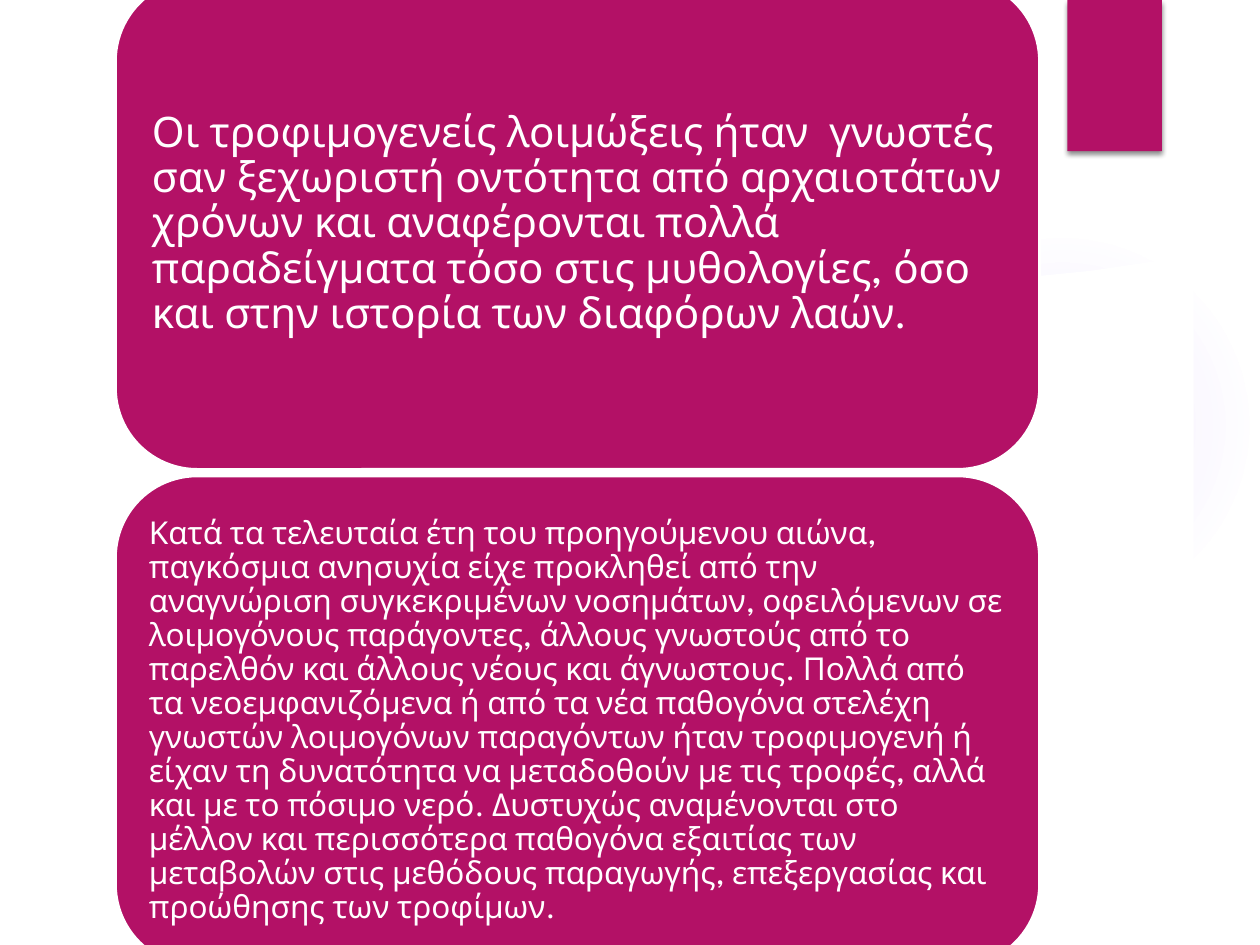
from dataclasses import dataclass

from lxml import etree
from pptx import Presentation
from pptx.dml.color import RGBColor
from pptx.enum import shapes, text
from pptx.oxml import ns
from pptx.util import Pt


@dataclass(frozen=True)
class Theme:
    accent: RGBColor = RGBColor(0xB3, 0x11, 0x66)
    paper: RGBColor = RGBColor(0xFF, 0xFF, 0xFF)
    glow: RGBColor = RGBColor(0x9B, 0x6B, 0xF2)
    font: str = "League Spartan"
    large: int = 24
    small: int = 18


@dataclass(frozen=True)
class Card:
    wording: str
    size: int


THEME = Theme()
CARD_LEFT, CARD_TOP, CARD_WIDTH, CARD_HEIGHT = 66, -11.8, 528, 280
CARD_PITCH = 283.8
# Position and opacity of the glow, in percent
GLOW_STOPS = [(0, 7), (36, 6), (69, 0)]
# Curved upper edge of the sheet, from right to left
SHEET_EDGE = [(682, 146), (652, 150.5), (623, 154.8), (594, 157.7), (565, 161.3),
              (507, 164.9), (450, 167.8), (395, 168.5), (316, 168.5), (243, 165.6),
              (160, 159.8), (95, 153.4), (38, 146)]

CARDS = [
    Card("Οι τροφιμογενείς λοιμώξεις ήταν  γνωστές σαν ξεχωριστή οντότητα από "
         "αρχαιοτάτων χρόνων και αναφέρονται πολλά παραδείγματα τόσο στις "
         "μυθολογίες, όσο και στην ιστορία των διαφόρων λαών.", THEME.large),
    Card("Κατά τα τελευταία έτη του προηγούμενου αιώνα, παγκόσμια ανησυχία είχε "
         "προκληθεί από την αναγνώριση συγκεκριμένων νοσημάτων, οφειλόμενων σε "
         "λοιμογόνους παράγοντες, άλλους γνωστούς από το παρελθόν και άλλους "
         "νέους και άγνωστους. Πολλά από τα νεοεμφανιζόμενα ή από τα νέα παθογόνα "
         "στελέχη γνωστών λοιμογόνων παραγόντων ήταν τροφιμογενή ή είχαν τη "
         "δυνατότητα να μεταδοθούν με τις τροφές, αλλά και με το πόσιμο νερό. "
         "Δυστυχώς αναμένονται στο μέλλον και περισσότερα παθογόνα εξαιτίας των "
         "μεταβολών στις μεθόδους παραγωγής, επεξεργασίας και προώθησης των "
         "τροφίμων.", THEME.small),
]


def apply(target, values: dict) -> None:
    for name, value in values.items():
        setattr(target, name, value)


def paint(shape, color: RGBColor) -> None:
    shape.shadow.inherit = False
    shape.fill.solid()
    shape.fill.fore_color.rgb = color
    shape.line.fill.background()


def add_color(parent, color: RGBColor, opacity: int) -> None:
    tone = etree.SubElement(parent, ns.qn("a:srgbClr"), val=str(color))
    etree.SubElement(tone, ns.qn("a:alpha"), val=str(opacity * 1000))


def draw_glow(slide) -> None:
    glow = slide.shapes.add_shape(
        shapes.MSO_SHAPE.OVAL, Pt(496), Pt(132), Pt(222), Pt(222))
    paint(glow, THEME.glow)
    gradient = etree.Element(ns.qn("a:gradFill"), rotWithShape="1")
    stops = etree.SubElement(gradient, ns.qn("a:gsLst"))
    for position, opacity in GLOW_STOPS:
        stop = etree.SubElement(stops, ns.qn("a:gs"), pos=str(position * 1000))
        add_color(stop, THEME.glow, opacity)
    circle = etree.SubElement(gradient, ns.qn("a:path"), path="circle")
    center = dict.fromkeys("ltrb", "50000")
    etree.SubElement(circle, ns.qn("a:fillToRect"), center)
    properties = glow.element.spPr
    properties.replace(properties.find(ns.qn("a:solidFill")), gradient)


def draw_sheet(slide) -> None:
    builder = slide.shapes.build_freeform(Pt(38), Pt(503))
    outline = [(682, 503), *SHEET_EDGE]
    builder.add_line_segments([(Pt(x), Pt(y)) for x, y in outline])
    paint(builder.convert_to_shape(), THEME.paper)


def draw_tab(slide) -> None:
    tab = slide.shapes.add_shape(
        shapes.MSO_SHAPE.RECTANGLE, Pt(610), Pt(0), Pt(54), Pt(86.4))
    paint(tab, THEME.accent)
    effects = tab.element.spPr.find(ns.qn("a:effectLst"))
    shadow = etree.SubElement(
        effects, ns.qn("a:outerShdw"), blurRad=str(Pt(3)), dist=str(Pt(2)),
        dir="5400000", rotWithShape="0")
    add_color(shadow, RGBColor(0, 0, 0), 45)


def draw_card(slide, card: Card, top: float) -> None:
    panel = slide.shapes.add_shape(
        shapes.MSO_SHAPE.ROUNDED_RECTANGLE,
        Pt(CARD_LEFT), Pt(top), Pt(CARD_WIDTH), Pt(CARD_HEIGHT))
    paint(panel, THEME.accent)
    panel.line.color.rgb = THEME.paper
    panel.line.width = Pt(1.5)

    # Margins grow with the type size
    margin = Pt(0.3 * card.size)
    frame = panel.text_frame
    apply(frame, {
        "text": card.wording, "word_wrap": True,
        "vertical_anchor": text.MSO_ANCHOR.MIDDLE,
        "margin_left": margin, "margin_right": margin,
        "margin_top": margin, "margin_bottom": margin})
    paragraph = frame.paragraphs[0]
    apply(paragraph, {"alignment": text.PP_ALIGN.LEFT, "line_spacing": 0.9})
    font = paragraph.runs[0].font
    apply(font, {"name": THEME.font, "size": Pt(card.size)})
    font.color.rgb = THEME.paper


def main() -> None:
    deck = Presentation()
    apply(deck, {"slide_width": Pt(720), "slide_height": Pt(540)})
    slide = deck.slides.add_slide(deck.slide_layouts[6])

    # Background: glow rising behind the sheet, and the corner tab
    draw_glow(slide)
    draw_sheet(slide)
    draw_tab(slide)

    # Stacked statements
    for row, card in enumerate(CARDS):
        draw_card(slide, card, CARD_TOP + row * CARD_PITCH)

    deck.save("out.pptx")


if __name__ == "__main__":
    main()
